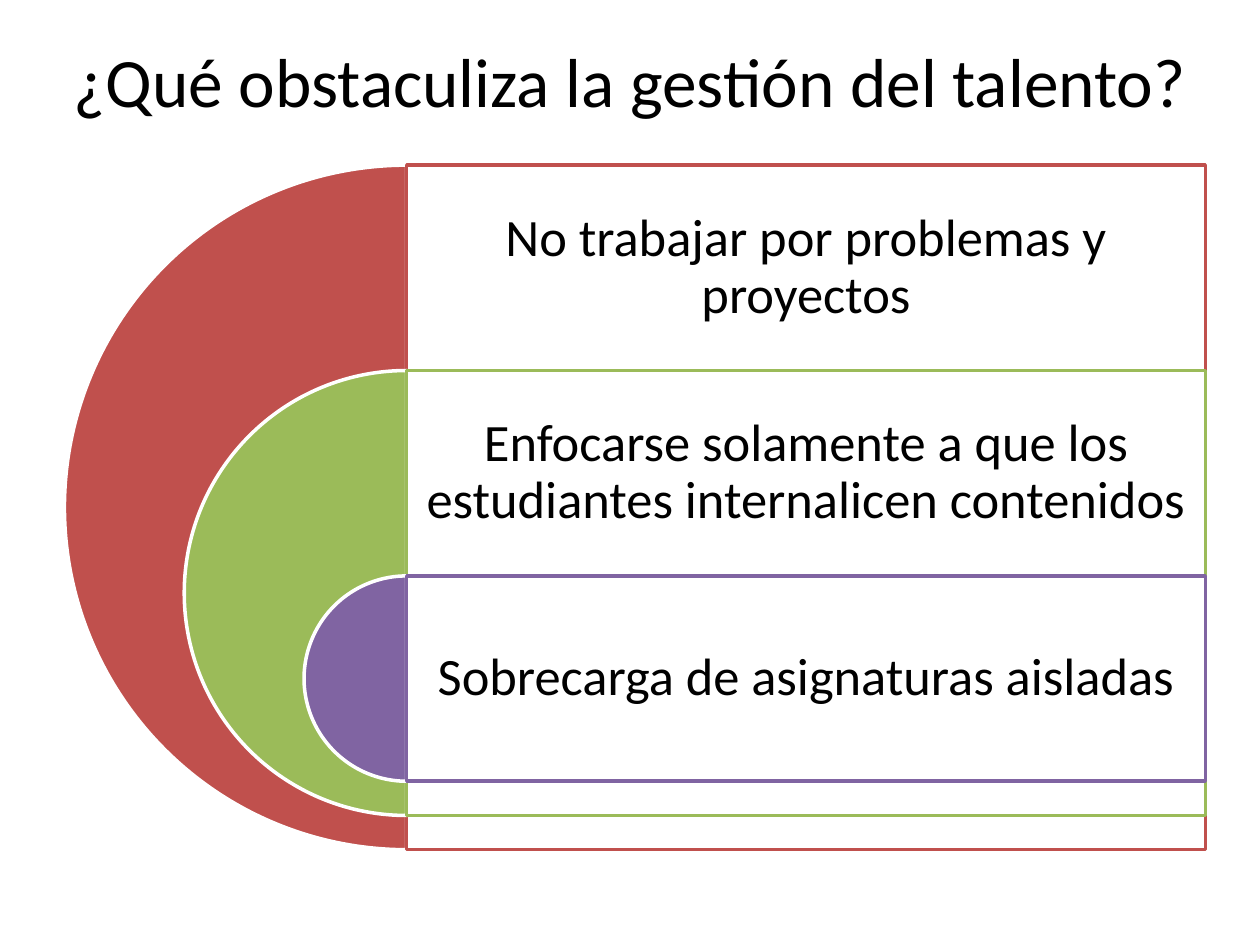
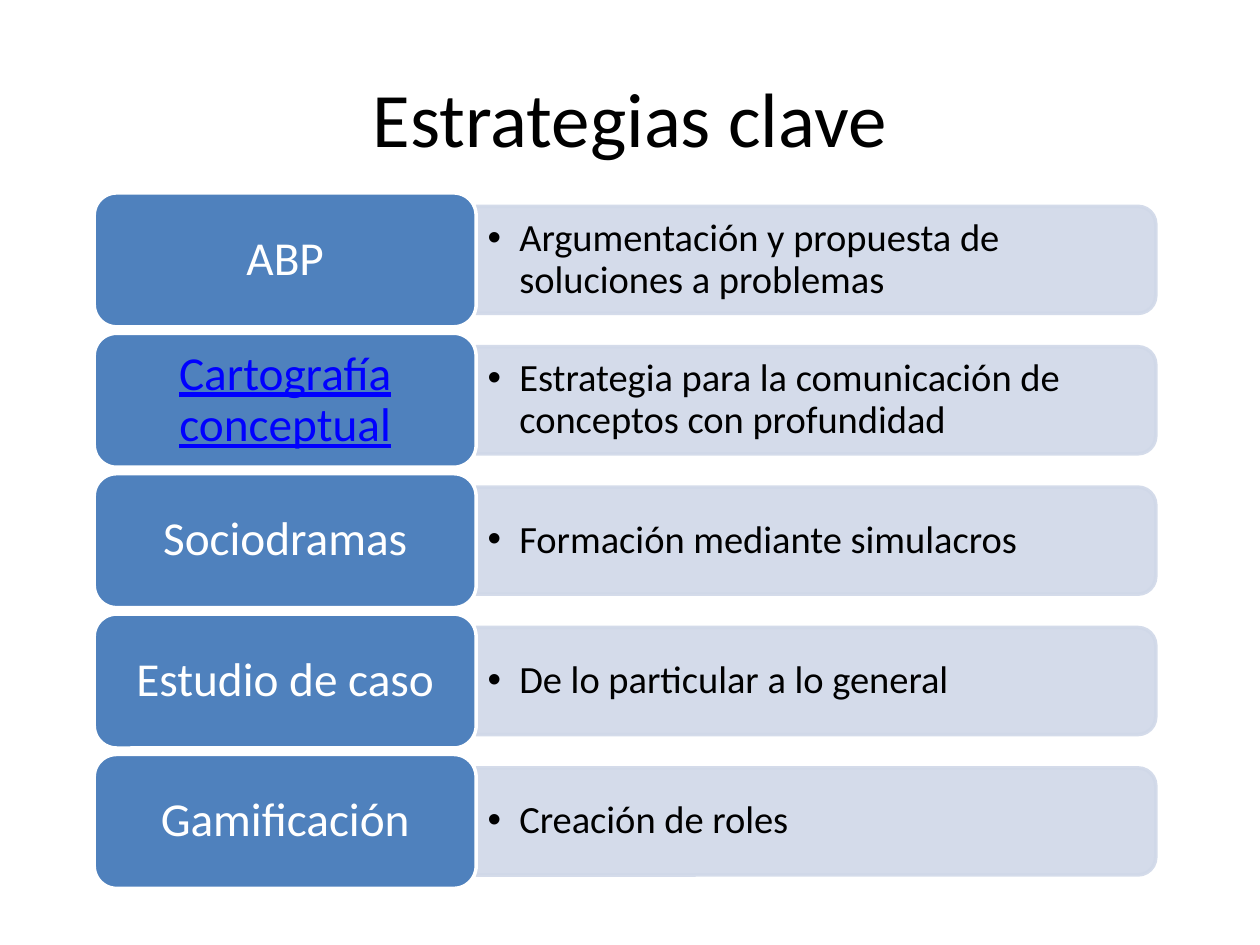
from lxml.etree import SubElement
from pptx import Presentation
from pptx.dml.color import RGBColor
from pptx.enum.shapes import MSO_SHAPE
from pptx.enum.text import MSO_ANCHOR, PP_ALIGN
from pptx.oxml.ns import qn
from pptx.util import Cm, Pt

COLORS = {
    "text": "000000", "white": "FFFFFF", "link": "0000FF",
    "red": "C0504D", "green": "9BBB59", "purple": "8064A2",
    "blue": "4F81BD", "pale": "D0D8E8",
}
FONT = "Calibri"

OBSTACLES = [
    ("red", "No trabajar por problemas y proyectos"),
    ("green", "Enfocarse solamente a que los estudiantes internalicen contenidos"),
    ("purple", "Sobrecarga de asignaturas aisladas"),
]
STRATEGIES = [
    ("ABP", "Argumentación y propuesta de soluciones a problemas"),
    ("Cartografía conceptual", "Estrategia para la comunicación de conceptos con profundidad"),
    ("Sociodramas", "Formación mediante simulacros"),
    ("Estudio de caso", "De lo particular a lo general"),
    ("Gamificación", "Creación de roles"),
]
LINKED = "Cartografía conceptual"


def rgb(name):
    return RGBColor.from_string(COLORS[name])


def fade(color_parent, percent=90):
    """Make every colour inside an XML element slightly transparent."""
    for color in color_parent.iter(qn("a:srgbClr")):
        SubElement(color, qn("a:alpha"), val=str(percent * 1000))


def add_part(slide, kind, box, fill, line):
    shape = slide.shapes.add_shape(kind, *(Cm(length) for length in box))
    shape.shadow.inherit = False
    shape.fill.solid()
    shape.fill.fore_color.rgb = rgb(fill)
    shape.line.color.rgb = rgb(line)
    shape.line.width = Pt(2)
    return shape


def write(shape, text, size, color="text", align=PP_ALIGN.CENTER, insets=(0.25, 0.13), spacing=0.9):
    """Fill a shape with one vertically centred paragraph."""
    frame = shape.text_frame
    frame.word_wrap = True
    frame.vertical_anchor = MSO_ANCHOR.MIDDLE
    frame.margin_left = frame.margin_right = Cm(insets[0])
    frame.margin_top = frame.margin_bottom = Cm(insets[1])
    para = frame.paragraphs[0]
    para.text = text
    para.alignment = align
    para.line_spacing = spacing
    span = para.runs[0]
    span.font.name = FONT
    span.font.size = Pt(size)
    span.font.color.rgb = rgb(color)
    return para


def add_text(slide, box, text, size, **style):
    shape = slide.shapes.add_textbox(*(Cm(length) for length in box))
    return write(shape, text, size, **style)


def add_title(slide, box, text, size):
    add_text(slide, box, text, size, spacing=1.0)


def add_bullet(para):
    properties = para._p.get_or_add_pPr()
    properties.set("marL", str(Cm(0.64)))
    properties.set("indent", str(-Cm(0.64)))
    SubElement(properties, qn("a:buFont"), typeface="Arial")
    SubElement(properties, qn("a:buChar"), char="•")


def add_nested_arcs(slide, left, top, width, height):
    """Half discs that shrink towards the bottom, each with a panel on its right."""
    row = 0.3 * height
    shrink = 0.35 * height
    axis = left + height / 2
    for index, (color, text) in enumerate(OBSTACLES):
        diameter = height - index * shrink
        level = top + index * row
        panel_width = left + width - axis
        # Left half of a disc
        arc = add_part(slide, MSO_SHAPE.PIE, (axis - diameter / 2, level, diameter, diameter),
                       color, "white")
        arc.adjustments[0] = 54
        arc.adjustments[1] = 162
        # Panel and its text
        panel = add_part(slide, MSO_SHAPE.RECTANGLE, (axis, level, panel_width, diameter),
                         "white", color)
        fade(panel.element.spPr.find(qn("a:solidFill")))
        add_text(slide, (axis, level, panel_width, row), text, 30, insets=(0.3, 0.3))


def add_strategy_rows(slide, left, top, width, height):
    """Equal rows of a label and a paler bar with a bullet."""
    gap = 0.13
    label_width = 7.7
    row = (height - gap * (len(STRATEGIES) - 1)) / len(STRATEGIES)
    bar_left = left + label_width
    bar_width = width - label_width
    bar_height = 0.8 * row
    for index, (label, detail) in enumerate(STRATEGIES):
        level = top + index * (row + gap)
        middle = level + row / 2
        # Bar, turned so that its round corners face right
        bar = add_part(slide, MSO_SHAPE.ROUND_2_SAME_RECTANGLE,
                       (bar_left + (bar_width - bar_height) / 2, middle - bar_width / 2,
                        bar_height, bar_width), "pale", "pale")
        bar.rotation = 90
        fade(bar.element.spPr)
        para = add_text(slide, (bar_left, middle - 0.98, bar_width - 0.1, 1.96), detail, 22,
                        align=PP_ALIGN.LEFT, insets=(0.23, 0.13))
        add_bullet(para)
        # Label
        tile = add_part(slide, MSO_SHAPE.ROUNDED_RECTANGLE, (left, level, label_width, row),
                        "blue", "white")
        linked = label == LINKED
        para = write(tile, label, 27, "link" if linked else "white", insets=(0.28, 0.15))
        para.runs[0].font.underline = linked


def main():
    deck = Presentation()
    deck.slide_width, deck.slide_height = Cm(25.4), Cm(19.05)
    blank = deck.slide_layouts[6]

    obstacles = deck.slides.add_slide(blank)
    add_title(obstacles, (0, 0.5, 25.4, 2.2), "¿Qué obstaculiza la gestión del talento?", 39.6)
    add_nested_arcs(obstacles, 1.3, 3.33, 23, 13.8)

    strategies = deck.slides.add_slide(blank)
    add_title(strategies, (1.27, 0.76, 22.86, 3.18), "Estrategias clave", 44)
    add_strategy_rows(strategies, 1.9, 3.89, 21.4, 14.02)

    deck.save("out.pptx")


if __name__ == "__main__":
    main()
